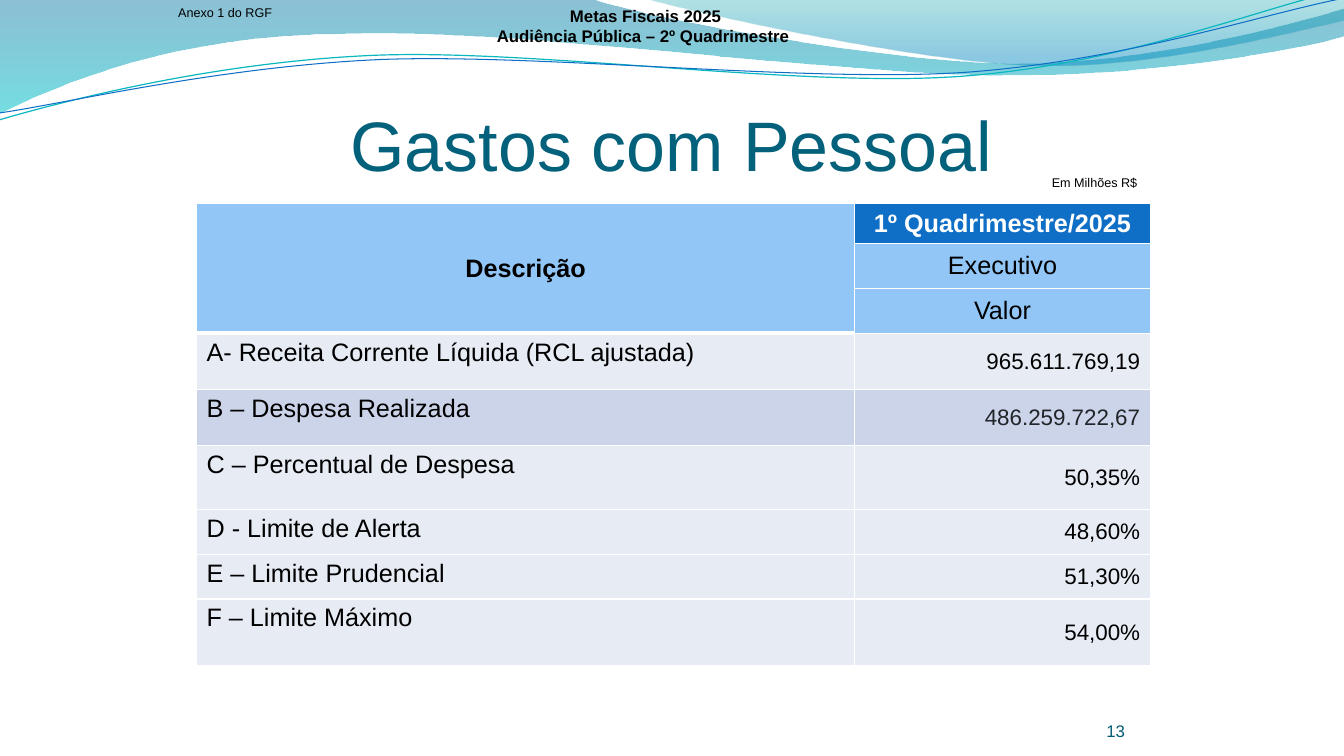
from lxml import etree
from pptx import Presentation
from pptx.dml.color import RGBColor
from pptx.enum.text import MSO_ANCHOR, PP_ALIGN
from pptx.oxml.ns import qn
from pptx.util import Pt

LEFT, CENTER, RIGHT = PP_ALIGN.LEFT, PP_ALIGN.CENTER, PP_ALIGN.RIGHT
TOP, MIDDLE, BOTTOM = MSO_ANCHOR.TOP, MSO_ANCHOR.MIDDLE, MSO_ANCHOR.BOTTOM

FONT = "Arial"
BLACK = RGBColor(0x00, 0x00, 0x00)
WHITE = RGBColor(0xFF, 0xFF, 0xFF)
GRAPHITE = RGBColor(0x21, 0x25, 0x29)
TITLE_TEAL = RGBColor(0x04, 0x61, 0x7B)
NUMBER_TEAL = RGBColor(0x03, 0x5C, 0x75)
BLUE = RGBColor(0x0F, 0x6F, 0xC6)
LIGHT_BLUE = RGBColor(0x91, 0xC6, 0xF7)
PALE = RGBColor(0xE7, 0xEB, 0xF4)
BAND = RGBColor(0xCC, 0xD4, 0xEA)
CYAN = RGBColor(0x09, 0xB7, 0xBF)
WAVE_BLUE = RGBColor(0x00, 0x74, 0xA0)
WAVE_CYAN = RGBColor(0x00, 0xC4, 0xCD)
CREST_BLUE = RGBColor(0x00, 0x8A, 0xBF)
CREST_GREEN = RGBColor(0x00, 0xA0, 0xA8)

# Outlines: a start point, then segments of one point (line) or three (Bezier curve)
# Gradient stops: position, colour, opacity in percent
WAVES = [
    {"outline": [[(0, -0.7)],
                 [(422.6, -0.7)],
                 [(456.5, 12.2), (637.2, 45.4), (727.9, 45.4)],
                 [(818.6, 45.4), (920.2, 18.7), (959.8, 6.5)],
                 [(961.2, 25.9)],
                 [(943.9, 31.7), (835.2, 54.7), (715.7, 54)],
                 [(596.9, 54), (366.5, 20.2), (247, 24.5)],
                 [(123.8, 25.2), (43.9, 59.8), (-0.7, 81.4)],
                 [(0, -0.7)]],
     "stops": [(0, WAVE_BLUE, 45), (1, WAVE_CYAN, 55)], "angle": 270},
    {"outline": [[(460.1, -0.7)],
                 [(488.9, 7.9), (654.5, 44.6), (738, 46.8)],
                 [(821.5, 49.7), (923, 23), (959.8, 15.1)],
                 [(959.8, 0)],
                 [(460.1, -0.7)]],
     "stops": [(0.2, CREST_BLUE, 45), (1, CREST_GREEN, 30)], "angle": 90},
]
RIPPLES = [
    ([[(-0.7, 85.7)],
      [(46.1, 72), (151.9, 44.6), (265.7, 39.6)],
      [(379.4, 34.6), (568.1, 62.6), (684, 54.7)],
      [(799.2, 46.8), (900.7, 5.8), (958.3, -7.2)]], CYAN, 0.85),
    ([[(0, 80.6)],
      [(45.4, 74.2), (157, 47.5), (272.2, 42.5)],
      [(386.6, 38.2), (573.1, 59), (687.6, 51.8)],
      [(802.8, 43.9), (903.6, 9.4), (960.5, -1.4)]], BLUE, 0.75),
]

# lines, box, insets, size, colour, bold, alignment, anchor
PADDED = (7.2, 3.6, 7.2, 3.6)
TEXTS = [
    (["Gastos com Pessoal"], (155.8, 55.4, 648, 90), (0, 3.6, 0, 0),
     50, TITLE_TEAL, False, CENTER, MIDDLE),
    (["13"], (743.8, 500.4, 59.8, 28.8), (0, 0, 0, 0),
     12, NUMBER_TEAL, False, RIGHT, BOTTOM),
    (["Em Milhões R$"], (742.8, 121.7, 78, 18), PADDED,
     9, BLACK, False, CENTER, TOP),
    (["Anexo 1 do RGF"], (120.2, 0, 97.2, 18), PADDED,
     9, BLACK, False, LEFT, TOP),
    (["Metas Fiscais 2025", "Audiência Pública – 2º Quadrimestre "],
     (339.1, 0, 244.1, 36.4), PADDED, 12, BLACK, True, CENTER, MIDDLE),
]

TABLE_LEFT, TABLE_TOP = 140.4, 145.4
COLUMNS = [470.2, 211]
ROWS = [28.7, 32, 32, 40.2, 40.3, 45.3, 32.4, 31.7, 47.5]
HEADINGS = [
    ("1º Quadrimestre/2025", BLUE, WHITE, True),
    ("Executivo", LIGHT_BLUE, BLACK, False),
    ("Valor", LIGHT_BLUE, BLACK, False),
]
SPENDING = [
    ("A- Receita Corrente Líquida (RCL ajustada)", "965.611.769,19", PALE, BLACK),
    ("B – Despesa Realizada", "486.259.722,67", BAND, GRAPHITE),
    ("C – Percentual de Despesa", "50,35%", PALE, BLACK),
    ("D - Limite de Alerta", "48,60%", PALE, BLACK),
    ("E – Limite Prudencial", "51,30%", PALE, BLACK),
    ("F – Limite Máximo", "54,00%", PALE, BLACK),
]
THIN, THICK = 0.96, 3


def add_outline(slide, outline, close):
    """Draw an outline, joining each three-point segment into one Bezier curve."""
    start, *points = [(Pt(x), Pt(y)) for segment in outline for x, y in segment]
    builder = slide.shapes.build_freeform(*start)
    builder.add_line_segments(points, close=close)
    sp = builder.convert_to_shape()
    sp.shadow.inherit = False
    steps = iter(list(sp._element.spPr.iter(qn("a:lnTo"))))
    for segment in outline[1:]:
        first, *others = [next(steps) for _ in segment]
        if others:
            first.tag = qn("a:cubicBezTo")
        for step in others:
            first.append(step[0])
            step.getparent().remove(step)
    return sp


def add_wave(slide, outline, stops, angle):
    sp = add_outline(slide, outline, True)
    sp.line.fill.background()
    sp.fill.gradient()
    sp.fill.gradient_angle = angle
    for stop, (position, color, _) in zip(sp.fill.gradient_stops, stops):
        stop.position = position
        stop.color.rgb = color
    colors = sp._element.spPr.iter(qn("a:srgbClr"))
    for element, (_, _, opacity) in zip(colors, stops):
        etree.SubElement(element, qn("a:alpha"), val=str(opacity * 1000))


def style_paragraph(p, text, size, color, bold, align):
    p.text = text
    p.alignment = align
    p.font.name = FONT
    p.font.size = Pt(size)
    p.font.bold = bold
    p.font.color.rgb = color


def add_text(slide, lines, box, insets, size, color, bold, align, anchor):
    tf = slide.shapes.add_textbox(*map(Pt, box)).text_frame
    tf.word_wrap = True
    tf.vertical_anchor = anchor
    tf.margin_left, tf.margin_top, tf.margin_right, tf.margin_bottom = map(Pt, insets)
    for i, line in enumerate(lines):
        p = tf.add_paragraph() if i else tf.paragraphs[0]
        style_paragraph(p, line, size, color, bold, align)


def set_borders(cell, top=THIN, bottom=THIN):
    tcPr = cell._tc.get_or_add_tcPr()
    for side, width in (("L", THIN), ("R", THIN), ("T", top), ("B", bottom)):
        ln = etree.SubElement(tcPr, qn("a:ln" + side), w=str(Pt(width)))
        fill = etree.SubElement(ln, qn("a:solidFill"))
        etree.SubElement(fill, qn("a:srgbClr"), val=str(WHITE))


def fill_cell(cell, text, fill, size, color, bold, align, anchor):
    cell.fill.solid()
    cell.fill.fore_color.rgb = fill
    cell.vertical_anchor = anchor
    style_paragraph(cell.text_frame.paragraphs[0], text, size, color, bold, align)


def add_spending_table(slide):
    table = slide.shapes.add_table(
        len(ROWS), len(COLUMNS), Pt(TABLE_LEFT), Pt(TABLE_TOP),
        Pt(sum(COLUMNS)), Pt(sum(ROWS))).table
    table.first_row = table.horz_banding = False
    for column, width in zip(table.columns, COLUMNS):
        column.width = Pt(width)
    for row, height in zip(table.rows, ROWS):
        row.height = Pt(height)

    first = len(HEADINGS)
    for r in range(len(ROWS)):
        set_borders(table.cell(r, 0), THICK if r == first else THIN,
                    THICK if r < first else THIN)
        set_borders(table.cell(r, 1))
    table.cell(0, 0).merge(table.cell(first - 1, 0))
    fill_cell(table.cell(0, 0), "Descrição", LIGHT_BLUE, 18, BLACK, True, CENTER, MIDDLE)
    for r, (text, fill, color, bold) in enumerate(HEADINGS):
        fill_cell(table.cell(r, 1), text, fill, 18, color, bold, CENTER, MIDDLE)
    for r, (label, value, fill, color) in enumerate(SPENDING, first):
        fill_cell(table.cell(r, 0), label, fill, 18, BLACK, False, LEFT, TOP)
        fill_cell(table.cell(r, 1), value, fill, 16, color, False, RIGHT, MIDDLE)


def main():
    prs = Presentation()
    prs.slide_width, prs.slide_height = Pt(960), Pt(540)
    slide = prs.slides.add_slide(prs.slide_layouts[6])
    for wave in WAVES:
        add_wave(slide, **wave)
    for outline, color, width in RIPPLES:
        sp = add_outline(slide, outline, False)
        sp.fill.background()
        sp.line.color.rgb = color
        sp.line.width = Pt(width)
    add_spending_table(slide)
    for text in TEXTS:
        add_text(slide, *text)
    prs.save("out.pptx")


if __name__ == "__main__":
    main()
